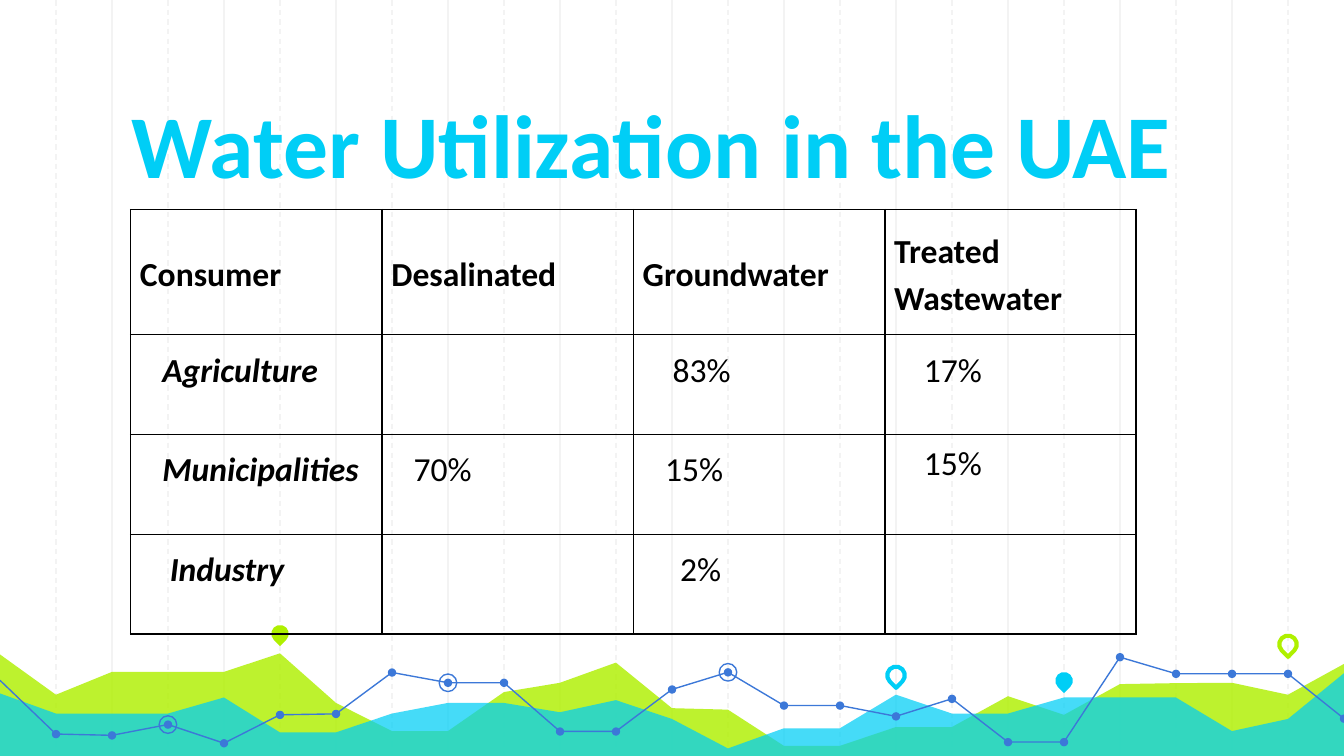
import dataclasses
import typing

import lxml.etree
import pptx
import pptx.dml.color
import pptx.enum.dml
import pptx.enum.shapes
import pptx.enum.text
import pptx.oxml.ns
import pptx.util

Pt = pptx.util.Pt
Shapes = pptx.enum.shapes.MSO_SHAPE
Anchor = pptx.enum.text.MSO_ANCHOR

COLORS = {
    "grid": "F3F3F3",
    "green": "AFF000",
    "cyan": "00CEF6",
    "blue": "3C78D8",
    "black": "000000",
}
SLIDE_WIDTH, SLIDE_HEIGHT = 720, 405
STEP = 30
BASE = 406.5
MARK_SIZE, DOT_SIZE = 9.4, 4.5
FONT = "Calibri"

GREEN_HEIGHTS = [350.6, 372.2, 360, 360, 360, 350, 376.6, 391.7, 391.7, 370.8, 365.8, 355, 379.4,
                 380.2, 399.6, 399.6, 389.5, 389.5, 373, 383, 366.5, 366, 365.8, 372.2, 355.7]
CYAN_HEIGHTS = [371.5, 382.3, 382.3, 382.3, 373.7, 392.4, 392.4, 382.3, 376.6, 376.6, 381.6, 375.1,
                385.2, 401, 390.2, 390.2, 372.2, 382.3, 382.3, 373.7, 373.7, 373.7, 391.7, 385.2, 360.7]
TREND_HEIGHTS = [364.5, 393.3, 394, 388.2, 398.2, 383, 382.5, 360.3, 365.8, 365.8, 391.9, 391.9, 369.4,
                 360.2, 378, 378, 383.8, 374.4, 397.6, 397.6, 352.1, 361, 361, 361, 385]
RINGED_STEPS = (3, 8, 13)


@dataclasses.dataclass
class Pin:
    step: int
    y: float
    color: str
    filled: bool


@dataclasses.dataclass
class Entry:
    """One table cell; indent is the distance from the cell's left inset."""
    text: str = ""
    indent: float = 12
    bold: bool = False
    italic: bool = False
    anchor: typing.Any = Anchor.TOP
    spacing: float = 1.15
    before: float = 4.8
    after: float = 10


PINS = [
    Pin(5, 339.5, "green", True),
    Pin(16, 361.8, "cyan", False),
    Pin(19, 364.7, "cyan", True),
    Pin(23, 345.2, "green", False),
]


def header(text: str) -> Entry:
    return Entry(text, 0, bold=True, anchor=Anchor.MIDDLE, before=0)


def consumer(text: str, indent: float = 12) -> Entry:
    return Entry(text, indent, bold=True, italic=True)


ROWS = [
    [header(name) for name in ("Consumer", "Desalinated", "Groundwater", "Treated Wastewater")],
    [consumer("Agriculture"), Entry(), Entry("83%", 16), Entry("17%", 16)],
    [consumer("Municipalities"), Entry("70%"), Entry("15%"),
     Entry("15%", 16, spacing=1, before=0, after=0)],
    [consumer("Industry", 16), Entry(), Entry("2%", 20), Entry()],
]


def rgb(name: str) -> pptx.dml.color.RGBColor:
    return pptx.dml.color.RGBColor.from_string(COLORS[name])


def set_attributes(target: typing.Any, values: dict) -> None:
    for name, value in values.items():
        setattr(target, name, value)


def style_shape(shape, fill: str | None = None, line: str | None = None,
                width: float = 0.75, opacity: int = 100) -> None:
    shape.shadow.inherit = False
    if fill:
        shape.fill.solid()
        shape.fill.fore_color.rgb = rgb(fill)
        if opacity < 100:
            color = shape.fill._xPr.find(".//" + pptx.oxml.ns.qn("a:srgbClr"))
            lxml.etree.SubElement(color, pptx.oxml.ns.qn("a:alpha"), val=str(opacity * 1000))
    else:
        shape.fill.background()
    if line:
        shape.line.color.rgb = rgb(line)
        shape.line.width = Pt(width)
    else:
        shape.line.fill.background()


def draw_grid(page) -> None:
    for step in range(1, SLIDE_WIDTH // STEP):
        x = Pt(step * STEP)
        rule = page.shapes.add_connector(
            pptx.enum.shapes.MSO_CONNECTOR.STRAIGHT, x, 0, x, Pt(BASE))
        rule.line.color.rgb = rgb("grid")
        rule.line.width = Pt(0.75)
        if step % 2:
            rule.line.dash_style = pptx.enum.dml.MSO_LINE.DASH
        lxml.etree.SubElement(rule._element.spPr, pptx.oxml.ns.qn("a:effectLst"))


def draw_series(page, heights: list[float], closed: bool, **style) -> None:
    """Draw heights one step apart, as an area down to the base or an open line."""
    points = [(Pt(step * STEP), Pt(y)) for step, y in enumerate(heights)]
    if closed:
        points += [(Pt(SLIDE_WIDTH), Pt(BASE)), (0, Pt(BASE))]
    builder = page.shapes.build_freeform(*points[0])
    builder.add_line_segments(points[1:], close=closed)
    style_shape(builder.convert_to_shape(), **style)


def draw_mark(page, kind, step: int, y: float, size: float, **style):
    """Draw a small preset shape centred on a grid step."""
    mark = page.shapes.add_shape(
        kind, Pt(step * STEP - size / 2), Pt(y - size / 2), Pt(size), Pt(size))
    style_shape(mark, **style)
    return mark


def draw_pin(page, pin: Pin) -> None:
    style = {"fill": pin.color} if pin.filled else {"line": pin.color, "width": 2.25}
    draw_mark(page, Shapes.TEAR, pin.step, pin.y, MARK_SIZE, **style).rotation = 135


def write(para, text: str, size: float, color: str, bold: bool, italic: bool = False) -> None:
    span = para.add_run()
    span.text = text
    set_attributes(span.font, {"name": FONT, "size": Pt(size), "bold": bold, "italic": italic})
    span.font.color.rgb = rgb(color)


def draw_title(page) -> None:
    box = page.shapes.add_textbox(Pt(24.5), Pt(37.4), Pt(671), Pt(75))
    set_attributes(box.text_frame, {
        "word_wrap": True, "vertical_anchor": Anchor.BOTTOM, "margin_left": Pt(7.2),
        "margin_right": Pt(29), "margin_top": Pt(7.2), "margin_bottom": Pt(7.2)})
    para = box.text_frame.paragraphs[0]
    set_attributes(para, {"alignment": pptx.enum.text.PP_ALIGN.CENTER,
                          "line_spacing": 1.15, "space_after": Pt(10)})
    write(para, "Water Utilization in the UAE", 48, "cyan", True)


def add_borders(cell) -> None:
    properties = cell._tc.get_or_add_tcPr()
    for side in ("lnL", "lnR", "lnT", "lnB"):
        border = lxml.etree.SubElement(properties, pptx.oxml.ns.qn("a:" + side), w=str(Pt(1)))
        fill = lxml.etree.SubElement(border, pptx.oxml.ns.qn("a:solidFill"))
        lxml.etree.SubElement(fill, pptx.oxml.ns.qn("a:srgbClr"), val=COLORS["black"])


def fill_cell(cell, entry: Entry) -> None:
    add_borders(cell)
    cell.fill.background()
    set_attributes(cell, {"vertical_anchor": entry.anchor} | {
        "margin_" + side: Pt(5) for side in ("left", "right", "top", "bottom")})
    if entry.text:
        para = cell.text_frame.paragraphs[0]
        set_attributes(para, {"line_spacing": entry.spacing, "space_before": Pt(entry.before),
                              "space_after": Pt(entry.after)})
        para._p.get_or_add_pPr().set("marL", str(Pt(entry.indent)))
        write(para, entry.text, 18, "black", entry.bold, entry.italic)


def draw_table(page) -> None:
    heights = [67, 53.5, 53.5, 53.5]
    column_width = 134.7
    table = page.shapes.add_table(len(ROWS), len(ROWS[0]), Pt(70), Pt(112.3),
                                  Pt(column_width * len(ROWS[0])), Pt(sum(heights))).table
    set_attributes(table, {"first_row": False, "horz_banding": False})
    for column in table.columns:
        column.width = Pt(column_width)
    for row_index, (height, entries) in enumerate(zip(heights, ROWS)):
        table.rows[row_index].height = Pt(height)
        for column_index, entry in enumerate(entries):
            fill_cell(table.cell(row_index, column_index), entry)


def main() -> None:
    deck = pptx.Presentation()
    set_attributes(deck, {"slide_width": Pt(SLIDE_WIDTH), "slide_height": Pt(SLIDE_HEIGHT)})
    page = deck.slides.add_slide(deck.slide_layouts[6])
    draw_grid(page)
    draw_series(page, GREEN_HEIGHTS, True, fill="green", opacity=82)
    draw_series(page, CYAN_HEIGHTS, True, fill="cyan", opacity=73)
    draw_series(page, TREND_HEIGHTS, False, line="blue")
    for step, y in enumerate(TREND_HEIGHTS[1:], start=1):
        draw_mark(page, Shapes.OVAL, step, y, DOT_SIZE, fill="blue")
    for step in RINGED_STEPS:
        draw_mark(page, Shapes.OVAL, step, TREND_HEIGHTS[step], MARK_SIZE, line="blue")
    for pin in PINS:
        draw_pin(page, pin)
    draw_title(page)
    draw_table(page)
    deck.save("out.pptx")


if __name__ == "__main__":
    main()
